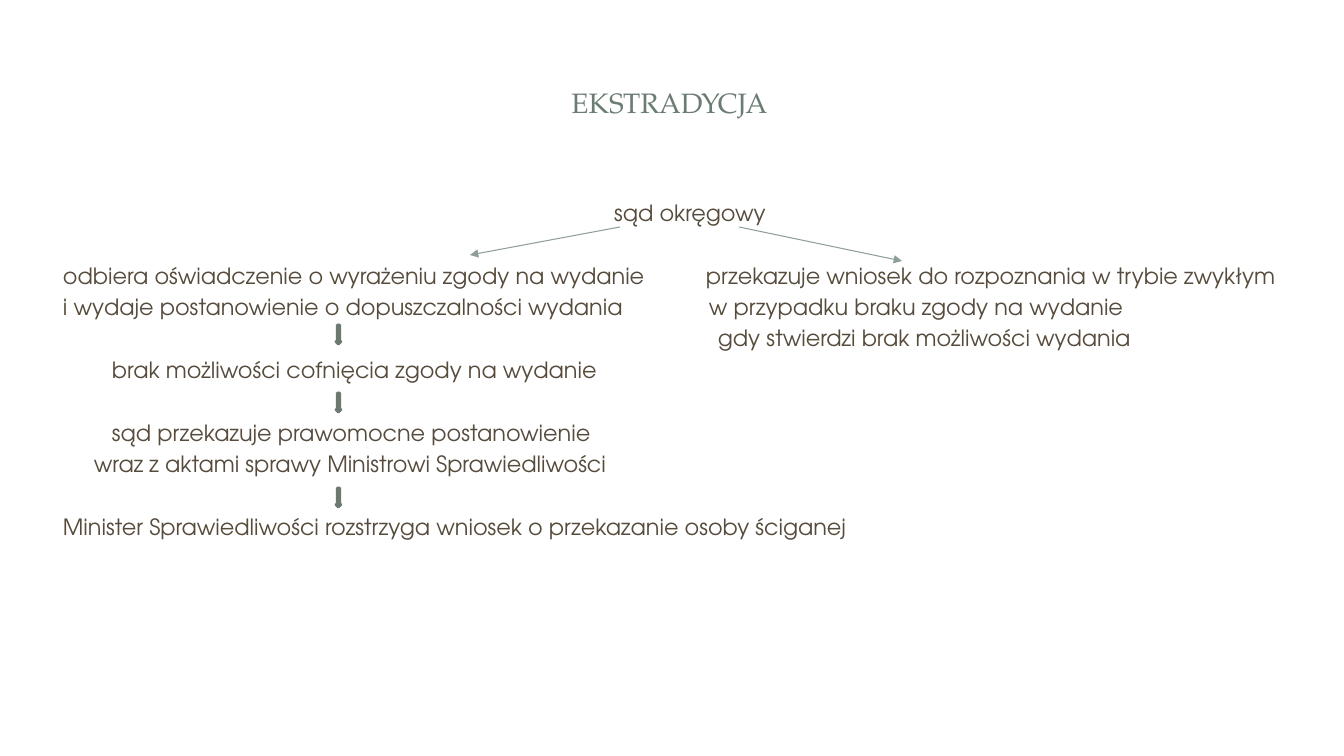
from dataclasses import dataclass

import pptx
import pptx.dml.color
import pptx.enum.shapes
import pptx.enum.text
import pptx.oxml
import pptx.oxml.ns
import pptx.util
from pptx.slide import Slide

PX = 9071
RGBColor = pptx.dml.color.RGBColor
TITLE_COLOR = RGBColor(0x6B, 0x7D, 0x72)
TEXT_COLOR = RGBColor(0x56, 0x4B, 0x3C)
LINE_COLOR = RGBColor(0x8F, 0x9F, 0x96)
ARROW_FILL = RGBColor(0x93, 0xA2, 0x99)
ARROW_LINE = RGBColor(0x6D, 0x78, 0x71)
TITLE_FONT = "TeX Gyre Pagella"
TEXT_FONT = "TeX Gyre Adventor"
BODY_TOP = 199
ROW_PITCH = 31.4
CENTER = pptx.enum.text.PP_ALIGN.CENTER
LEFT = pptx.enum.text.PP_ALIGN.LEFT


@dataclass
class Step:
    text: str
    left: int
    row: int
    width: int
    indents: tuple[int, ...] = (0,)
    align: pptx.enum.text.PP_ALIGN = LEFT


@dataclass
class Branch:
    x1: int
    y1: int
    x2: int
    y2: int


STEPS = [
    Step("sąd okręgowy", 590, 0, 200, align=CENTER),
    Step("odbiera oświadczenie o wyrażeniu zgody na wydanie\n"
         "i wydaje postanowienie o dopuszczalności wydania", 63, 2, 610, (0, 0)),
    Step("przekazuje wniosek do rozpoznania w trybie zwykłym\n"
         "w przypadku braku zgody na wydanie\n"
         "gdy stwierdzi brak możliwości wydania", 706, 2, 610, (0, 3, 12)),
    Step("brak możliwości cofnięcia zgody na wydanie", 112, 5, 540),
    Step("sąd przekazuje prawomocne postanowienie\n"
         "wraz z aktami sprawy Ministrowi Sprawiedliwości", 94, 7, 560, (18, 0)),
    Step("Minister Sprawiedliwości rozstrzyga wniosek o przekazanie osoby ściganej",
         63, 10, 840),
]
BRANCHES = [Branch(620, 227, 470, 255), Branch(739, 227, 902, 261)]
DOWN_ARROW_TOPS = [325, 393, 488]


def px(n: float) -> pptx.util.Emu:
    return pptx.util.Emu(round(n * PX))


def add_title(s: Slide, text: str) -> None:
    tf = s.shapes.add_textbox(px(62), px(45), px(1215), px(115)).text_frame
    tf.word_wrap = True
    tf.vertical_anchor = pptx.enum.text.MSO_ANCHOR.MIDDLE
    tf.text = text
    p = tf.paragraphs[0]
    p.alignment = CENTER
    p.font.name = TITLE_FONT
    p.font.size = pptx.util.Pt(20)
    p.font.color.rgb = TITLE_COLOR
    format_runs(p, TITLE_FONT, 20, TITLE_COLOR)


def format_runs(p, font: str, size: int, color: RGBColor) -> None:
    for r in p.runs:
        r.font.name = font
        r.font.size = pptx.util.Pt(size)
        r.font.color.rgb = color


def add_step(s: Slide, step: Step) -> None:
    top = BODY_TOP + step.row * ROW_PITCH
    height = len(step.indents) * ROW_PITCH
    tf = s.shapes.add_textbox(px(step.left), px(top), px(step.width), px(height)).text_frame
    tf.margin_left = tf.margin_right = tf.margin_top = tf.margin_bottom = 0
    tf.word_wrap = True
    tf.text = step.text
    for i, (p, indent) in enumerate(zip(tf.paragraphs, step.indents)):
        p.alignment = step.align
        p.space_before = pptx.util.Pt(3.2 if i else 0)
        p._p.get_or_add_pPr().set("marL", str(px(indent)))
        format_runs(p, TEXT_FONT, 16, TEXT_COLOR)


def add_branch(s: Slide, b: Branch) -> None:
    line = s.shapes.add_connector(pptx.enum.shapes.MSO_CONNECTOR.STRAIGHT,
                                  px(b.x1), px(b.y1), px(b.x2), px(b.y2))
    line.line.color.rgb = LINE_COLOR
    line.line.width = pptx.util.Pt(0.75)
    ns = pptx.oxml.ns.nsdecls("a")
    line.line._get_or_add_ln().append(
        pptx.oxml.parse_xml(f'<a:tailEnd {ns} type="triangle"/>'))
    line._element.spPr.append(pptx.oxml.parse_xml(f"<a:effectLst {ns}/>"))


def add_down_arrow(s: Slide, top: int) -> None:
    sp = s.shapes.add_shape(pptx.enum.shapes.MSO_SHAPE.DOWN_ARROW,
                            px(336), px(top), px(5), px(19))
    sp.shadow.inherit = False
    sp.fill.solid()
    sp.fill.fore_color.rgb = ARROW_FILL
    sp.line.color.rgb = ARROW_LINE
    sp.line.width = pptx.util.Pt(2)


def main() -> None:
    prs = pptx.Presentation()
    prs.slide_width = px(1344)
    prs.slide_height = px(756)
    s = prs.slides.add_slide(prs.slide_layouts[6])
    add_title(s, "EKSTRADYCJA")
    for step in STEPS:
        add_step(s, step)
    for branch in BRANCHES:
        add_branch(s, branch)
    for top in DOWN_ARROW_TOPS:
        add_down_arrow(s, top)
    prs.save("out.pptx")


if __name__ == "__main__":
    main()
